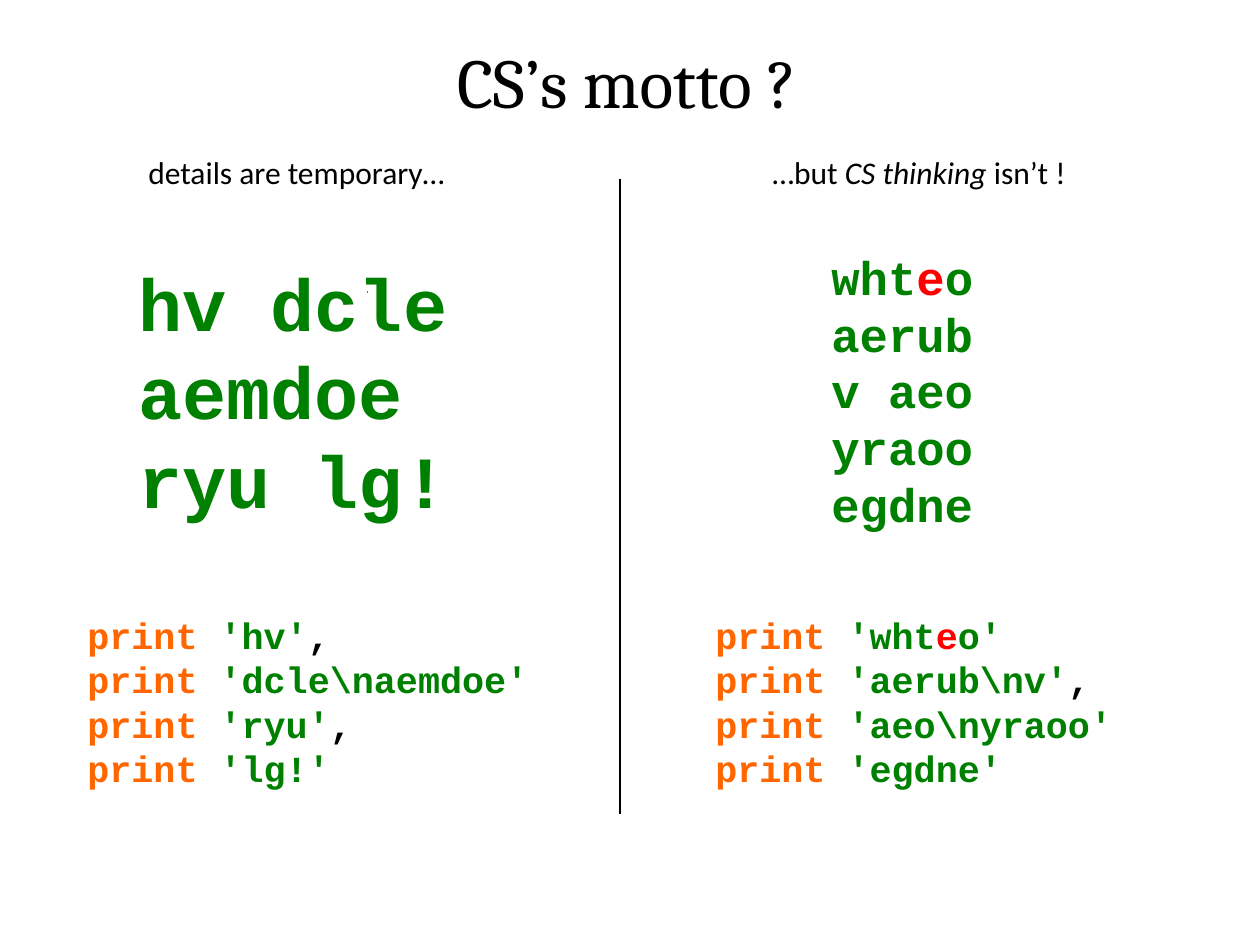
from lxml.etree import SubElement
from pptx import Presentation
from pptx.dml.color import RGBColor
from pptx.enum.shapes import MSO_CONNECTOR
from pptx.enum.text import MSO_AUTO_SIZE, PP_ALIGN
from pptx.oxml.ns import qn
from pptx.util import Emu, Pt

PX = 914400 // 126
COLORS = {
    "black": "000000",
    "keyword": "FF6600",
    "string": "008000",
    "highlight": "FF0000",
    "speck": "C0504D",
}
TITLE = [[("CS’s motto ? ", "black")]]
LEFT_HEADING = [[("details are temporary… ", "black")]]
RIGHT_HEADING = [[("…but ", "black"), ("CS thinking ", "black", True), ("isn’t !", "black")]]
LEFT_WORDS = [[(line, "string")] for line in ("hv dcle", "aemdoe", "ryu lg!")]
RIGHT_WORDS = [[("wht", "string"), ("e", "highlight"), ("o", "string")]] + [
    [(line, "string")] for line in ("aerub", "v aeo", "yraoo", "egdne")
]


def px(length):
    return Emu(length * PX)


def color(name):
    return RGBColor.from_string(COLORS[name])


def print_line(*parts):
    return [("print ", "keyword"), *parts]


def add_text(slide, box, lines, font, size, bold=False, align=PP_ALIGN.LEFT, wrap=True):
    """Each line is a list of (words, color name, optional italic flag)."""
    frame = slide.shapes.add_textbox(*map(px, box)).text_frame
    frame.word_wrap = wrap
    frame.auto_size = MSO_AUTO_SIZE.SHAPE_TO_FIT_TEXT
    for index, line in enumerate(lines):
        paragraph = frame.add_paragraph() if index else frame.paragraphs[0]
        paragraph.alignment = align
        for words, color_name, *italic in line:
            run = paragraph.add_run()
            run.text = words
            run.font.name = font
            run.font.size = Pt(size)
            run.font.bold = bold
            run.font.italic = bool(italic)
            run.font.color.rgb = color(color_name)


def add_divider(slide, x, top, bottom):
    divider = slide.shapes.add_connector(MSO_CONNECTOR.STRAIGHT, px(x), px(top), px(x), px(bottom))
    divider.line.color.rgb = color("black")
    divider.line.width = Pt(0.75)
    SubElement(divider._element.spPr, qn("a:effectLst"))


def add_speck(slide, x, y):
    outline = slide.shapes.build_freeform(x + 1, y, scale=PX)
    outline.add_line_segments([(x, y)], close=False)
    speck = outline.convert_to_shape()
    speck.shadow.inherit = False
    speck.fill.background()
    speck.line.color.rgb = color("speck")
    speck.line.width = Pt(1.5)


def main():
    presentation = Presentation()
    presentation.slide_width, presentation.slide_height = px(1260), px(945)
    slide = presentation.slides.add_slide(presentation.slide_layouts[6])

    # Title
    add_text(slide, (94, 32, 1081, 97), TITLE, "Cambria", 40, align=PP_ALIGN.CENTER)

    # Code that prints each puzzle
    left_code = [
        print_line(("'hv'", "string"), (",", "black")),
        print_line(("'dcle\\naemdoe'", "string")),
        print_line(("'ryu'", "string"), (",", "black")),
        print_line(("'lg!'", "string")),
    ]
    right_code = [
        print_line(("'wht", "string"), ("e", "highlight"), ("o'", "string")),
        print_line(("'aerub\\nv'", "string"), (",", "black")),
        print_line(("'aeo\\nyraoo'", "string")),
        print_line(("'egdne'", "string")),
    ]
    for left, code in ((75, left_code), (703, right_code)):
        add_text(slide, (left, 607, 479, 190), code, "Courier New", 21, bold=True)

    # Divider and column headings
    add_divider(slide, 620, 179, 814)
    add_text(slide, (134, 147, 325, 50), LEFT_HEADING, "Calibri", 18,
             align=PP_ALIGN.CENTER, wrap=False)
    add_text(slide, (651, 147, 536, 50), RIGHT_HEADING, "Calibri", 18, align=PP_ALIGN.CENTER)

    # Letter puzzles, read down the columns
    add_text(slide, (126, 252, 410, 280), LEFT_WORDS, "Courier New", 42, bold=True)
    add_text(slide, (819, 242, 252, 299), RIGHT_WORDS, "Courier New", 27, bold=True)

    # Pen speck
    add_speck(slide, 367, 292)

    presentation.save("out.pptx")


if __name__ == "__main__":
    main()
